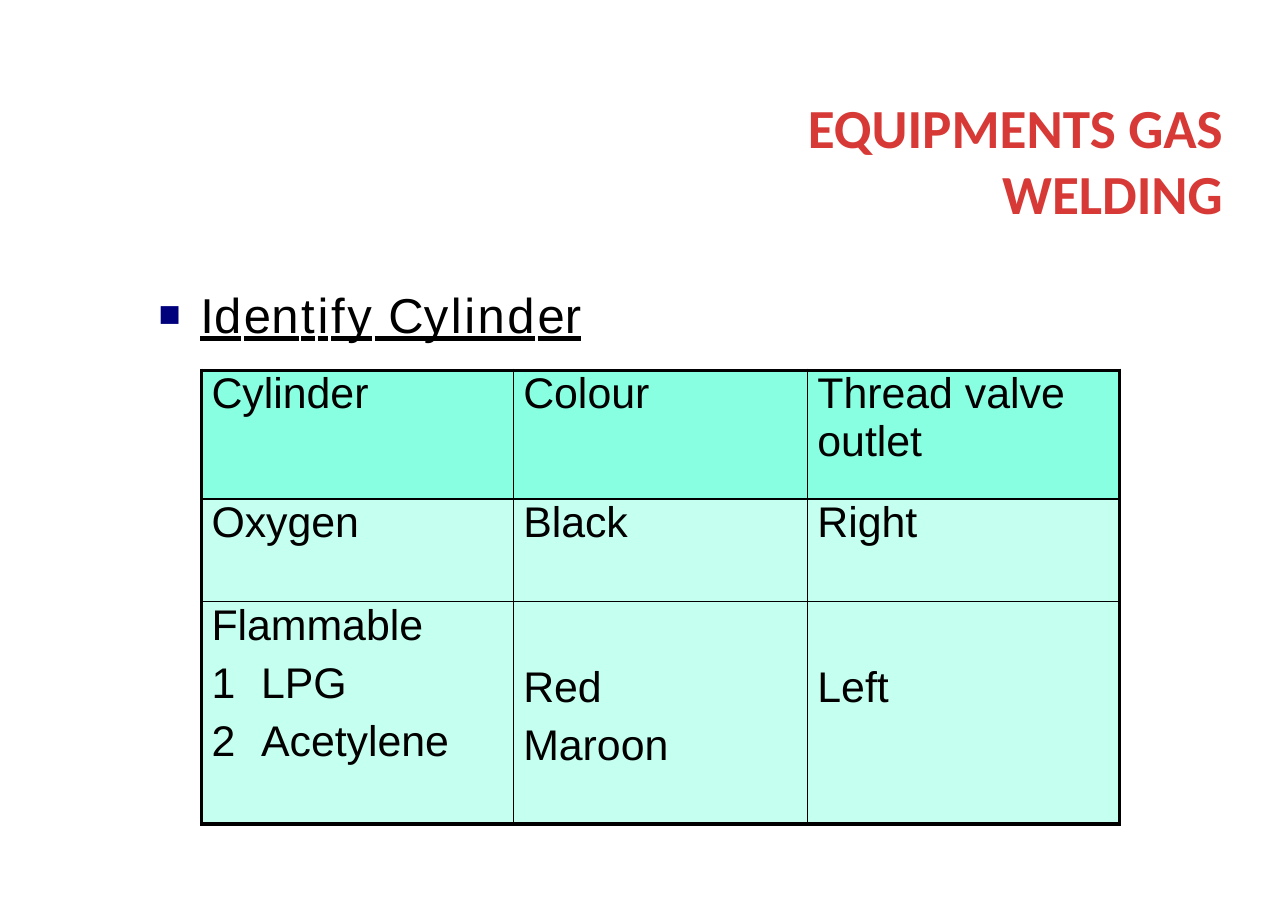
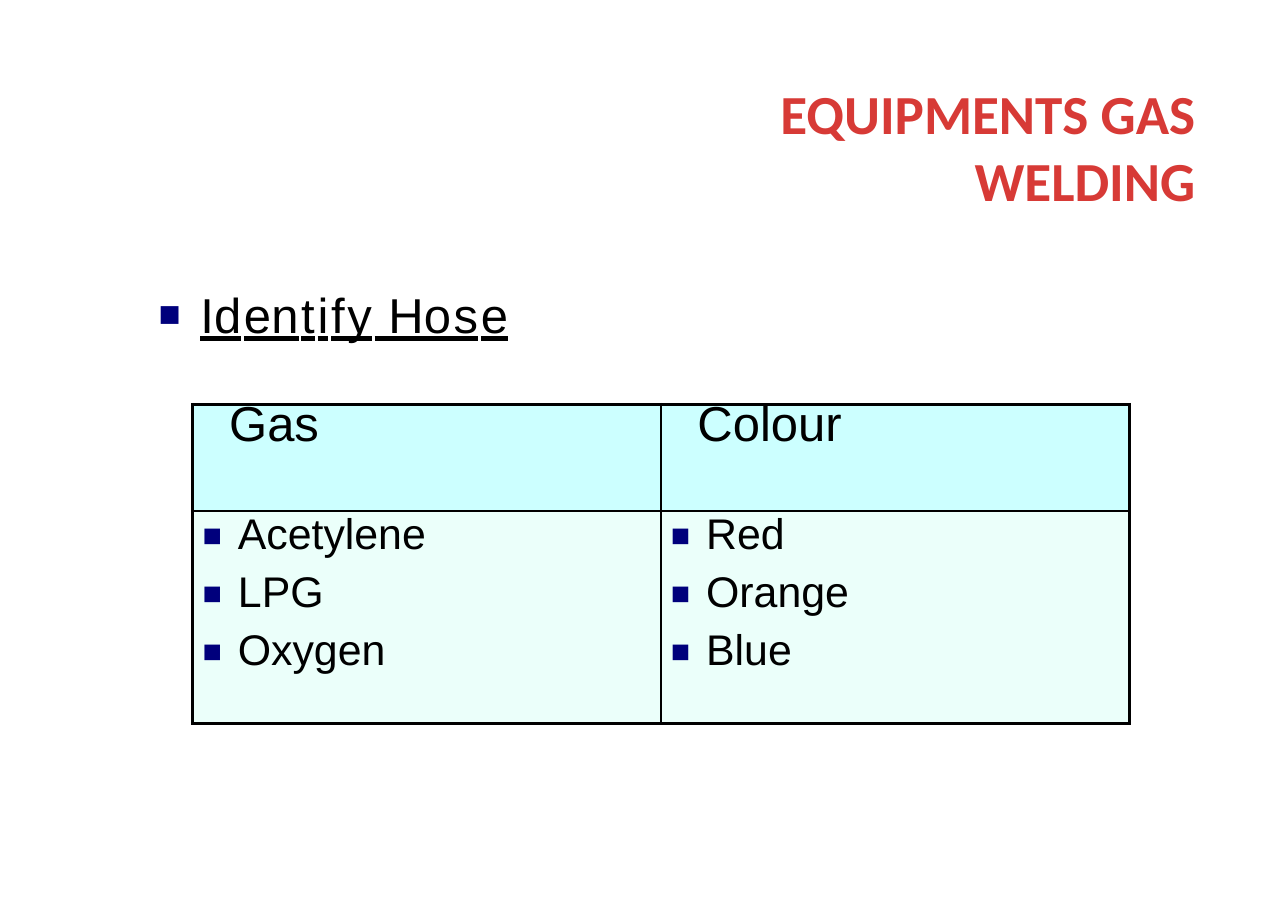
from lxml import etree
from pptx import Presentation
from pptx.dml.color import RGBColor
from pptx.enum.text import MSO_ANCHOR, MSO_AUTO_SIZE, MSO_UNDERLINE, PP_ALIGN
from pptx.oxml.ns import qn
from pptx.util import Inches, Pt

SLIDE_WIDTH, SLIDE_HEIGHT = 11.69, 8.26
RED, NAVY, BLACK = "D73A36", "00007C", "000000"
OUTER_LINE, INNER_LINE = 2.28, 1.08
PARAGRAPH_GAP = 6.7
TITLE = "EQUIPMENTS GAS WELDING"
TITLE_SIZE = (4.51, 1.21)
HEADING_BOX = (1.44, 2.58, 4.2, 0.53)

# Heading runs pair their text with letter spacing in points.
IDENTIFY = [("I", -0.1), ("d", 1.7), ("e", -0.1), ("n", 1.7), ("t", 1.8),
            ("i", 1.7), ("fy", 1.8), (" ", -0.5)]

# A cell is a list of (text, marker) lines; "top" holds cell margins in points.
SLIDES = [
    {
        "title_at": (6.59, 0.84),
        "heading": IDENTIFY + [("C", 0), ("ylind", 1.7), ("e", -0.1), ("r", 1.8)],
        "table_at": (1.83, 3.36),
        "columns": [2.83, 2.67, 2.83],
        "rows": [
            {"height": 1.17, "fill": "88FFE0", "cells": [
                [("Cylinder", None)],
                [("Colour", None)],
                [("Thread valve outlet", None)]]},
            {"height": 0.93, "fill": "C5FFF0", "cells": [
                [("Oxygen", None)],
                [("Black", None)],
                [("Right", None)]]},
            {"height": 2.02, "fill": "C5FFF0", "top": [0, 41, 41], "cells": [
                [("Flammable", None), ("LPG", "number"), ("Acetylene", "number")],
                [("Red", None), ("Maroon", None)],
                [("Left", None)]]},
        ],
    },
    {
        "title_at": (6.34, 0.72),
        "heading": IDENTIFY + [("H", 0), ("os", 1.7), ("e", 0)],
        "table_at": (1.75, 3.67),
        "columns": [4.25, 4.25],
        "rows": [
            {"height": 0.44, "fill": "CCFFFF", "open": "B",
             "left": 0.33, "size": 32, "line_spacing": 31, "cells": [
                 [("Gas", None)],
                 [("Colour", None)]]},
            {"height": 0.53, "fill": "CCFFFF", "open": "T", "cells": [[], []]},
            {"height": 1.93, "fill": "EBFFFA", "cells": [
                [(gas, "square") for gas in ("Acetylene", "LPG", "Oxygen")],
                [(colour, "square") for colour in ("Red", "Orange", "Blue")]]},
        ],
    },
]


def rgb(value):
    return RGBColor.from_string(value)


def add_element(parent, tag, **attributes):
    return etree.SubElement(parent, qn(tag), attributes)


def add_marker(paragraph, marker, indent):
    """Give a paragraph a navy square or a running number, with a hanging indent."""
    properties = paragraph._p.get_or_add_pPr()
    properties.set("marL", str(Inches(indent)))
    properties.set("indent", str(-Inches(indent)))
    if marker == "square":
        color = add_element(properties, "a:buClr")
        add_element(color, "a:srgbClr", val=NAVY)
        add_element(properties, "a:buSzPct", val="75000")
        add_element(properties, "a:buFont", typeface="Arial")
        add_element(properties, "a:buChar", char="■")
    else:
        add_element(properties, "a:buFont", typeface="Arial")
        add_element(properties, "a:buAutoNum", type="arabicPlain")


def add_run(paragraph, content, size, color=BLACK, font="Arial"):
    run = paragraph.add_run()
    run.text = content
    run.font.name = font
    run.font.size = Pt(size)
    run.font.color.rgb = rgb(color)
    return run


def clear_frame(frame):
    frame.word_wrap = True
    frame.auto_size = MSO_AUTO_SIZE.NONE
    frame.margin_left = frame.margin_right = 0
    frame.margin_top = frame.margin_bottom = 0


def add_title(slide, position):
    title = slide.shapes.title
    title.left, title.top = map(Inches, position)
    title.width, title.height = map(Inches, TITLE_SIZE)
    frame = title.text_frame
    clear_frame(frame)
    frame.vertical_anchor = MSO_ANCHOR.MIDDLE
    paragraph = frame.paragraphs[0]
    paragraph.alignment = PP_ALIGN.RIGHT
    add_run(paragraph, TITLE, 36, RED, "Calibri").font.bold = True


def add_heading(slide, runs):
    frame = slide.shapes.add_textbox(*map(Inches, HEADING_BOX)).text_frame
    clear_frame(frame)
    paragraph = frame.paragraphs[0]
    add_marker(paragraph, "square", 0.38)
    for content, spacing in runs:
        run = add_run(paragraph, content, 32)
        run.font.underline = MSO_UNDERLINE.HEAVY_LINE
        run.font._element.set("spc", str(round(spacing * 100)))


def set_borders(cell, outer_sides, open_side):
    properties = cell._tc.get_or_add_tcPr()
    for side in "LRTB":
        width = OUTER_LINE if side in outer_sides else INNER_LINE
        line = add_element(properties, f"a:ln{side}", w=str(Pt(width)))
        if side == open_side:
            add_element(line, "a:noFill")
        else:
            fill = add_element(line, "a:solidFill")
            add_element(fill, "a:srgbClr", val=BLACK)


def fill_cell(cell, lines, row, top):
    cell.fill.solid()
    cell.fill.fore_color.rgb = rgb(row["fill"])
    cell.margin_left = Inches(row.get("left", 0.09))
    cell.margin_right = cell.margin_bottom = 0
    cell.margin_top = Pt(top)
    frame = cell.text_frame
    for index, (content, marker) in enumerate(lines):
        paragraph = frame.add_paragraph() if index else frame.paragraphs[0]
        if marker:
            add_marker(paragraph, marker, 0.32 if marker == "square" else 0.45)
        if index:
            paragraph.space_before = Pt(PARAGRAPH_GAP)
        if "line_spacing" in row:
            paragraph.line_spacing = Pt(row["line_spacing"])
        add_run(paragraph, content, row.get("size", 28))


def add_grid(slide, position, columns, rows):
    size = (sum(columns), sum(row["height"] for row in rows))
    table = slide.shapes.add_table(
        len(rows), len(columns), *map(Inches, position + size)).table
    table.first_row = table.horz_banding = False
    for column, width in zip(table.columns, columns):
        column.width = Inches(width)
    last_row, last_column = len(rows) - 1, len(columns) - 1
    for r, row in enumerate(rows):
        table.rows[r].height = Inches(row["height"])
        tops = row.get("top", [0] * len(columns))
        for c, (lines, top) in enumerate(zip(row["cells"], tops)):
            edges = {"L": c == 0, "R": c == last_column,
                     "T": r == 0, "B": r == last_row}
            outer_sides = [side for side, outer in edges.items() if outer]
            cell = table.cell(r, c)
            set_borders(cell, outer_sides, row.get("open"))
            fill_cell(cell, lines, row, top)


def main():
    presentation = Presentation()
    presentation.slide_width = Inches(SLIDE_WIDTH)
    presentation.slide_height = Inches(SLIDE_HEIGHT)
    title_only = presentation.slide_layouts[5]
    for content in SLIDES:
        slide = presentation.slides.add_slide(title_only)
        add_heading(slide, content["heading"])
        add_title(slide, content["title_at"])
        add_grid(slide, content["table_at"], content["columns"], content["rows"])
    presentation.save("out.pptx")


if __name__ == "__main__":
    main()
